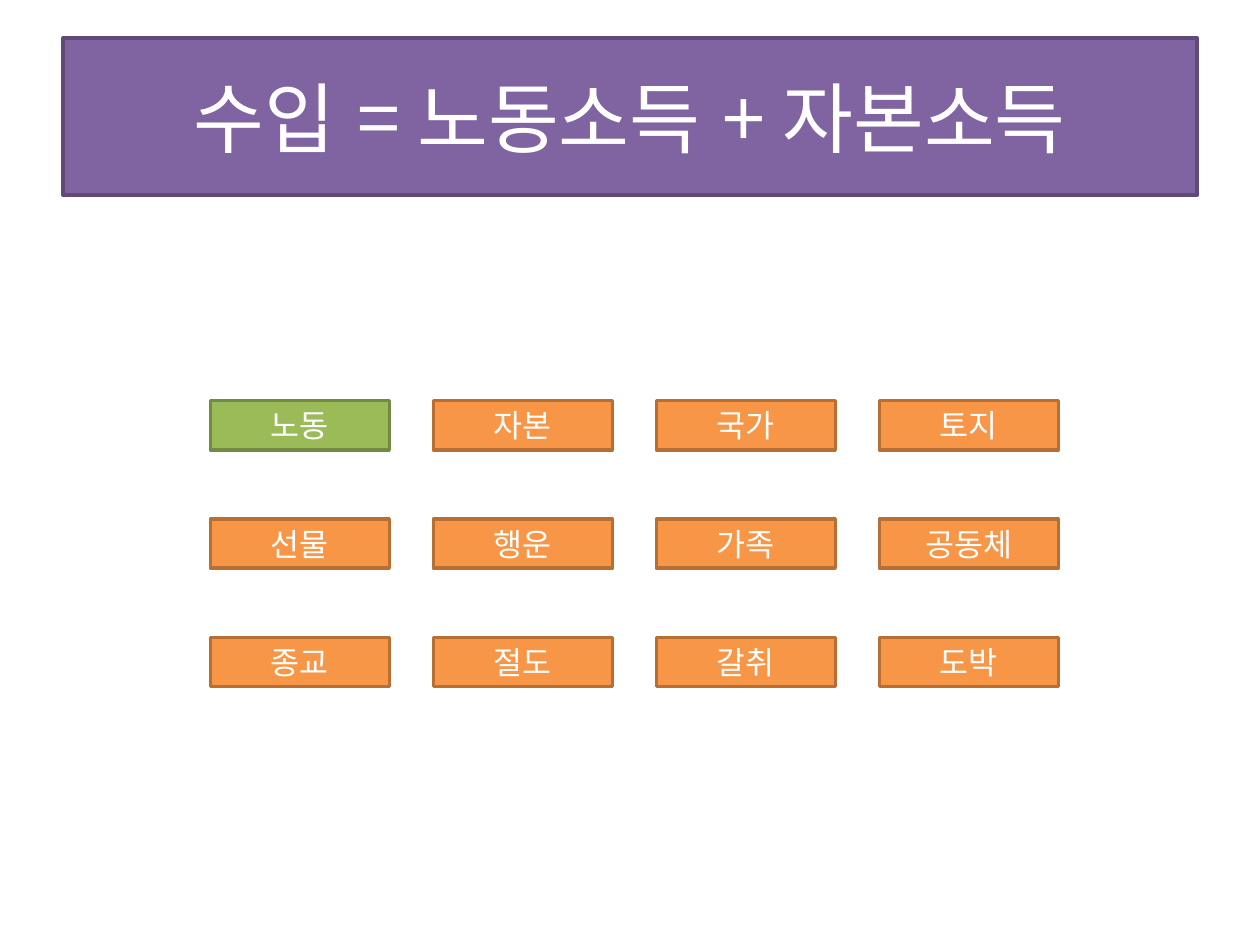
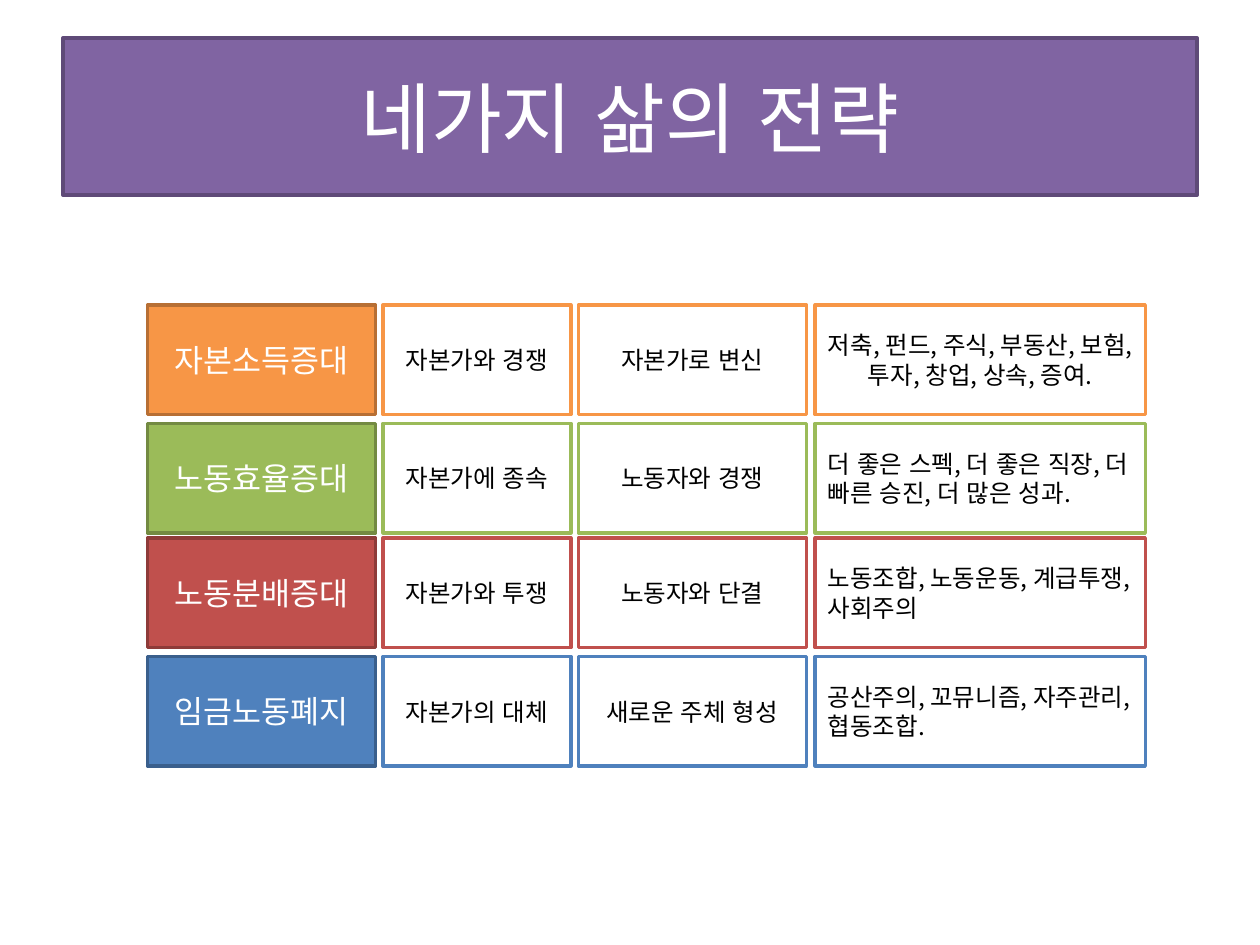
"""Build two slides on kinds of income and four life strategies."""
from dataclasses import dataclass

from lxml import etree
from pptx import Presentation
from pptx import util as u
from pptx.dml.color import RGBColor
from pptx.enum import lang, shapes, text
from pptx.oxml.ns import qn


@dataclass(frozen=True)
class Theme:
    font: str = "Noto Sans CJK KR"
    white: str = "FFFFFF"
    black: str = "000000"
    purple: tuple = ("8064A2", "5F4A78")
    orange: tuple = ("F79646", "B76F34")
    green: tuple = ("9BBB59", "738A42")
    red: tuple = ("C0504D", "8E3B39")
    blue: tuple = ("4F81BD", "3A5F8C")
    title_size: int = 44
    label_size: int = 18
    body_size: int = 14
    outline: int = 2


theme = Theme()


def style_box(box, words, colors, size, ink=theme.white, align=text.PP_ALIGN.CENTER):
    """Fill and outline a box, then set its text."""
    fill, line = colors
    box.fill.solid()
    box.fill.fore_color.rgb = RGBColor.from_string(fill)
    box.line.color.rgb = RGBColor.from_string(line)
    box.line.width = u.Pt(theme.outline)
    frame = box.text_frame
    frame.word_wrap = True
    frame.auto_size = text.MSO_AUTO_SIZE.NONE
    frame.vertical_anchor = text.MSO_ANCHOR.MIDDLE
    para = frame.paragraphs[0]
    para.alignment = align
    span = para.add_run()
    span.text = words
    span.font.size = u.Pt(size)
    span.font.name = theme.font
    span.font.language_id = lang.MSO_LANGUAGE_ID.KOREAN
    span.font.color.rgb = RGBColor.from_string(ink)
    east_asian = etree.SubElement(span.font._element, qn("a:ea"))
    east_asian.set("typeface", theme.font)


def add_box(page, left, top, width, height, *style):
    """Add a flat rectangle in the given style."""
    box = page.shapes.add_shape(
        shapes.MSO_SHAPE.RECTANGLE,
        u.Inches(left), u.Inches(top), u.Inches(width), u.Inches(height))
    box.shadow.inherit = False
    style_box(box, *style)


deck = Presentation()
deck.slide_width, deck.slide_height = u.Inches(10), u.Inches(7.5)

pages = []
for heading in ("수입 = 노동소득 + 자본소득", "네가지 삶의 전략"):
    page = deck.slides.add_slide(deck.slide_layouts[5])
    title = page.shapes.title
    title.left, title.top = u.Inches(0.5), u.Inches(0.3)
    title.width, title.height = u.Inches(9), u.Inches(1.25)
    style_box(title, heading, theme.purple, theme.title_size)
    pages.append(page)
income_page, strategy_page = pages

income_sources = (
    ("노동", "자본", "국가", "토지"),
    ("선물", "행운", "가족", "공동체"),
    ("종교", "절도", "갈취", "도박"),
)
for row, sources in enumerate(income_sources):
    for column, source in enumerate(sources):
        colors = theme.green if source == "노동" else theme.orange
        add_box(income_page, 1.67 + 1.77 * column, 3.18 + 0.94 * row, 1.42, 0.39,
                source, colors, theme.label_size)

center, left_aligned = text.PP_ALIGN.CENTER, text.PP_ALIGN.LEFT
detail_columns = ((3.04, 1.49), (4.59, 1.81), (6.47, 2.62))
strategies = (
    (2.42, theme.orange, center, "자본소득증대",
     ("자본가와 경쟁", "자본가로 변신",
      "저축, 펀드, 주식, 부동산, 보험, 투자, 창업, 상속, 증여.")),
    (3.36, theme.green, left_aligned, "노동효율증대",
     ("자본가에 종속", "노동자와 경쟁",
      "더 좋은 스펙, 더 좋은 직장, 더 빠른 승진, 더 많은 성과.")),
    (4.27, theme.red, left_aligned, "노동분배증대",
     ("자본가와 투쟁", "노동자와 단결", "노동조합, 노동운동, 계급투쟁, 사회주의")),
    (5.21, theme.blue, left_aligned, "임금노동폐지",
     ("자본가의 대체", "새로운 주체 형성", "공산주의, 꼬뮤니즘, 자주관리, 협동조합.")),
)
for top, colors, example_align, strategy, details in strategies:
    add_box(strategy_page, 1.17, top, 1.81, 0.87, strategy, colors, theme.label_size)
    aligns = (center, center, example_align)
    for (left, width), detail, align in zip(detail_columns, details, aligns):
        add_box(strategy_page, left, top, width, 0.87, detail,
                (theme.white, colors[0]), theme.body_size, theme.black, align)

deck.save("out.pptx")
